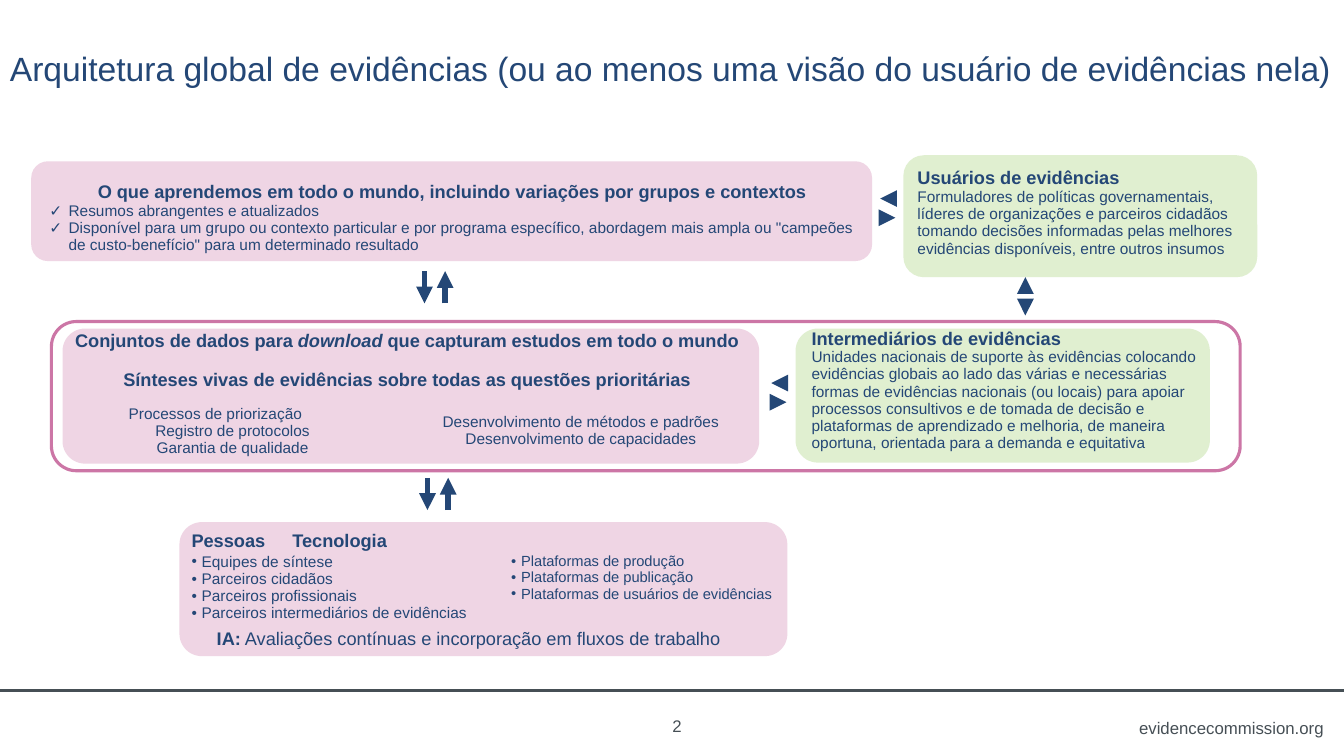
from dataclasses import dataclass
from lxml import etree
from pptx import Presentation
from pptx.dml.color import RGBColor
from pptx.enum.shapes import MSO_CONNECTOR, MSO_SHAPE
from pptx.enum.text import MSO_ANCHOR, PP_ALIGN
from pptx.oxml.ns import qn
from pptx.util import Inches, Pt

COLOURS = {"navy": "244776", "pink": "CC76A6", "green": "99CC66", "slate": "464F55"}
FONT = "Arial"
GRID = Inches(0.1)
COLUMNS, ROWS = 133.3, 75
NO_STYLE = "{2D5ABB26-0587-4C30-8999-92F81FD0307C}"
LEFT, CENTER, RIGHT = PP_ALIGN.LEFT, PP_ALIGN.CENTER, PP_ALIGN.RIGHT
TOP, MIDDLE = MSO_ANCHOR.TOP, MSO_ANCHOR.MIDDLE
ROUNDED, STRAIGHT = MSO_SHAPE.ROUNDED_RECTANGLE, MSO_CONNECTOR.STRAIGHT


def grid(count):
    """Convert grid columns or rows to a slide length."""
    return int(count * GRID)


@dataclass
class Box:
    """An area measured in grid columns and rows."""
    left: float
    top: float
    width: float
    height: float

    def inner(self, across, down, width, height):
        """Return an area placed from this one's top left corner."""
        return Box(self.left + across, self.top + down, width, height)

    def lengths(self):
        """Return the four slide lengths of the area."""
        return [grid(n) for n in (self.left, self.top, self.width, self.height)]


def colour(name):
    """Look up a named colour."""
    return RGBColor.from_string(COLOURS[name])


def write(frame, text, size=11, bold=False, ink="navy", align=LEFT,
          bullet=None, indent=0, hang=0, right=0, tab=None):
    """Add a paragraph; text is a string or a list of (text, bold, italic)."""
    para = frame.paragraphs[0]
    if para.runs:
        para = frame.add_paragraph()
    para.alignment = align
    properties = para._p.get_or_add_pPr()
    for key, length in (("marL", indent), ("marR", right), ("indent", -hang)):
        properties.set(key, str(grid(length)))
    if bullet:
        etree.SubElement(properties, qn("a:buFont")).set("typeface", FONT)
        etree.SubElement(properties, qn("a:buChar")).set("char", bullet)
    if tab:
        stops = etree.SubElement(properties, qn("a:tabLst"))
        etree.SubElement(stops, qn("a:tab"), pos=str(grid(tab)), algn="l")
    spans = [(text, bold, False)] if isinstance(text, str) else text
    for words, strong, slanted in spans:
        span = para.add_run()
        span.text = words
        span.font.name, span.font.size = FONT, Pt(size)
        span.font.bold, span.font.italic = strong, slanted
        span.font.color.rgb = colour(ink)


def add_label(page, box, text, left=1, right=1, **style):
    """Add a one-line text box."""
    frame = page.shapes.add_textbox(*box.lengths()).text_frame
    frame.word_wrap = True
    frame.vertical_anchor = MIDDLE
    frame.margin_left, frame.margin_right = grid(left), grid(right)
    write(frame, text, **style)


def add_panel(page, box, fill=None, outline=None):
    """Add a rounded panel with a translucent fill or an outline."""
    panel = page.shapes.add_shape(ROUNDED, *box.lengths())
    panel.shadow.inherit = False
    if fill:
        panel.fill.solid()
        panel.fill.fore_color.rgb = colour(fill)
        tint = panel.fill._xPr.find(qn("a:solidFill"))[0]
        etree.SubElement(tint, qn("a:alpha")).set("val", "30000")
    else:
        panel.fill.background()
    if outline:
        panel.line.color.rgb = colour(outline)
        panel.line.width = Pt(2.25)
    else:
        panel.line.fill.background()


def add_grid_table(page, box, widths, heights, anchor=TOP, top=0):
    """Add a clear table without style or borders."""
    table = page.shapes.add_table(len(heights), len(widths), *box.lengths()).table
    table.first_row = table.horz_banding = False
    table._tbl.tblPr.find(qn("a:tableStyleId")).text = NO_STYLE
    for column, width in zip(table.columns, widths):
        column.width = grid(width)
    for row, height in zip(table.rows, heights):
        row.height = grid(height)
    for cell in table.iter_cells():
        cell.fill.background()
        cell.vertical_anchor = anchor
        cell.margin_left = cell.margin_right = grid(0.2)
        cell.margin_top, cell.margin_bottom = grid(top), 0
    return table


def add_line(page, start, end, ink="navy", width=4, arrow=True):
    """Add a straight line, with an arrowhead if asked."""
    line = page.shapes.add_connector(STRAIGHT, *map(grid, start + end))
    line.line.color.rgb = colour(ink)
    line.line.width = Pt(width)
    if arrow:
        etree.SubElement(line.line._get_or_add_ln(), qn("a:tailEnd")).set("type", "triangle")
    etree.SubElement(line._element.spPr, qn("a:effectLst"))


def add_sideways_pair(page, left, top):
    """Add a left arrow above a right arrow."""
    add_line(page, (left + 1.5, top), (left, top))
    add_line(page, (left, top + 1.9), (left + 1.5, top + 1.9))


def add_upright_pair(page, left, top):
    """Add a down arrow beside an up arrow."""
    add_line(page, (left, top), (left, top + 3.2))
    add_line(page, (left + 2.05, top + 3.2), (left + 2.05, top))


def add_learning(page, box):
    """Place the panel on what is learned worldwide."""
    add_panel(page, box, "pink")
    area = box.inner(0.6, 1.8, box.width - 1.2, 7.7)
    frame = add_grid_table(page, area, [area.width], [area.height], MIDDLE).cell(0, 0).text_frame
    write(frame, "O que aprendemos em todo o mundo, incluindo variações por grupos e contextos",
          size=13, bold=True, align=CENTER)
    for point in ("Resumos abrangentes e atualizados",
                  "Disponível para um grupo ou contexto particular e por programa específico, "
                  "abordagem mais ampla ou \"campeões de custo-benefício\" para um determinado resultado"):
        write(frame, point, bullet="✓", indent=2.9, hang=1.9)


def add_syntheses(page, box):
    """Place the panel on data sets and living syntheses."""
    add_panel(page, box, "pink")
    half = box.width / 2
    table = add_grid_table(page, box.inner(-0.4, -0.7, box.width, 13.9),
                           [half, half], [3.9, 3.9, 6.1], MIDDLE)
    headings = ([("Conjuntos de dados para ", True, False), ("download", True, True),
                 (" que capturam estudos em todo o mundo", True, False)],
                "Sínteses vivas de evidências sobre todas as questões prioritárias")
    for row, heading in enumerate(headings):
        table.cell(row, 0).merge(table.cell(row, 1))
        write(table.cell(row, 0).text_frame, heading, size=13, bold=True, align=CENTER)
    processes, development = (table.cell(2, column).text_frame for column in (0, 1))
    write(processes, "Processos de priorização", align=CENTER, right=3.4)
    for text in ("Registro de protocolos", "Garantia de qualidade"):
        write(processes, text, align=CENTER)
    for text in ("Desenvolvimento de métodos e padrões", "Desenvolvimento de capacidades"):
        write(development, text, align=CENTER)


def add_resources(page, box):
    """Place the panel on people and technology."""
    add_panel(page, box, "pink")
    table = add_grid_table(page, box.inner(1, 0.9, 58.4, 15.4), [31.7, 26.7], [2.1, 7.5, 5.8])
    for row in (0, 2):
        table.cell(row, 0).merge(table.cell(row, 1))
    write(table.cell(0, 0).text_frame, "Pessoas\tTecnologia", size=13, bold=True, tab=31.3)
    lists = ((11, ("Equipes de síntese", "Parceiros cidadãos", "Parceiros profissionais",
                   "Parceiros intermediários de evidências")),
             (10.5, ("Plataformas de produção", "Plataformas de publicação",
                     "Plataformas de usuários de evidências")))
    for column, (size, points) in enumerate(lists):
        for point in points:
            write(table.cell(1, column).text_frame, point, size=size, bullet="•", indent=1, hang=1)
    write(table.cell(2, 0).text_frame,
          [("IA:", True, False),
           (" Avaliações contínuas e incorporação em fluxos de trabalho", False, False)],
          size=13, indent=2.5)


def add_audience(page, box, area, heading, text):
    """Place a green panel with a heading and a description."""
    add_panel(page, box, "green")
    table = add_grid_table(page, area, [area.width], [area.height], top=0.3)
    frame = table.cell(0, 0).text_frame
    write(frame, heading, size=13, bold=True)
    write(frame, text)


def add_footer(page, box):
    """Place the rule, page number and site address."""
    add_line(page, (box.left, box.top), (box.left + box.width, box.top), "slate", 2, arrow=False)
    add_label(page, box.inner(64.7, 1.5, 3.9, 4), "2", right=0, size=12, ink="slate", align=CENTER)
    add_label(page, box.inner(111.7, 2.2, 20.6, 3), "evidencecommission.org",
              size=12, ink="slate", align=RIGHT)


def main():
    """Build and save the deck."""
    deck = Presentation()
    deck.slide_width, deck.slide_height = grid(COLUMNS), grid(ROWS)
    page = deck.slides.add_slide(deck.slide_layouts[6])
    add_label(page, Box(0, 2.4, COLUMNS, 8.7),
              "Arquitetura global de evidências (ou ao menos uma visão do usuário de evidências nela)",
              right=0, size=24)
    add_learning(page, Box(3.1, 16, 83.4, 9.9))
    add_panel(page, Box(5.1, 31.9, 117.9, 14.8), outline="pink")
    add_syntheses(page, Box(6.2, 32.6, 69.1, 13.4))
    add_resources(page, Box(17.8, 51.8, 60.3, 13.3))
    brokers, users = Box(78.9, 32.6, 41.1, 13.3), Box(89.6, 15.4, 35.1, 12.1)
    add_audience(page, brokers, brokers.inner(1.4, -0.3, 39.4, 13.5), "Intermediários de evidências",
                 "Unidades nacionais de suporte às evidências colocando evidências globais ao lado das "
                 "várias e necessárias formas de evidências nacionais (ou locais) para apoiar processos "
                 "consultivos e de tomada de decisão e plataformas de aprendizado e melhoria, de maneira "
                 "oportuna, orientada para a demanda e equitativa")
    add_audience(page, users, users.inner(1.2, 1, 34.2, 9.9), "Usuários de evidências",
                 "Formuladores de políticas governamentais, líderes de organizações e parceiros cidadãos "
                 "tomando decisões informadas pelas melhores evidências disponíveis, entre outros insumos")
    for left, top in ((76.5, 38), (87.3, 19.7)):
        add_sideways_pair(page, left, top)
    for left, top in ((42.1, 26.9), (42.4, 47.4)):
        add_upright_pair(page, left, top)
    for start, end in ((29.1, 27.5), (29.7, 31.3)):
        add_line(page, (101.7, start), (101.7, end))
    add_footer(page, Box(0, 68.5, COLUMNS, 6.5))
    deck.save("out.pptx")


if __name__ == "__main__":
    main()
